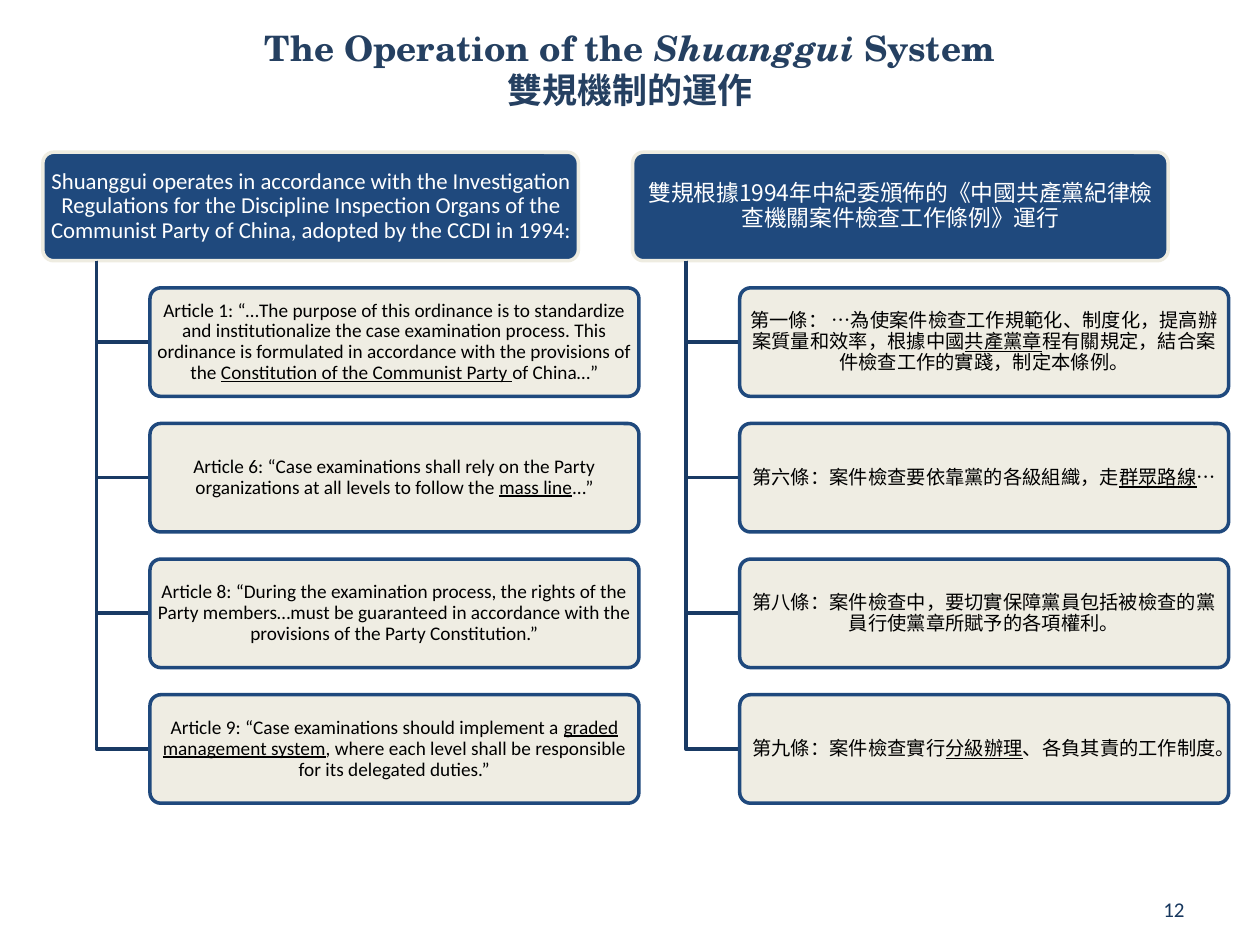
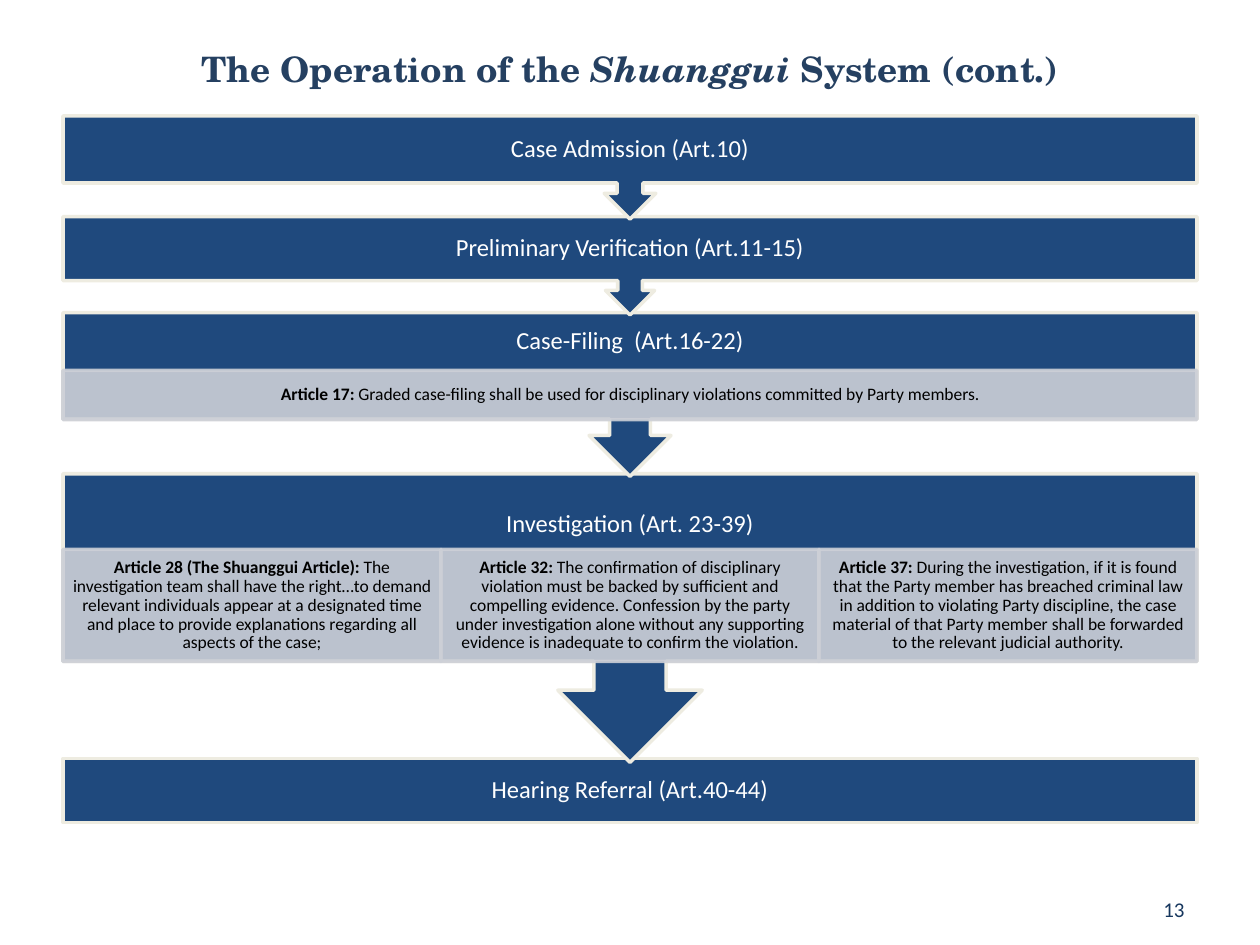
"""Build two slides on the operation of the Shuanggui system."""
from pptx import Presentation
from pptx import util as u
from pptx.dml.color import RGBColor
from pptx.enum import shapes, text
from pptx.oxml.ns import qn
from pptx.oxml.xmlchemy import OxmlElement


class Theme:
    navy, deep, spine, page = "1F497D", "254061", "193A64", "17375E"
    sand, mist, white, black = "EEECE1", "CDD0D7", "FFFFFF", "000000"
    serif, sans, han = "TeX Gyre Schola", "Calibri", "Noto Sans CJK TC"
    title, step, head, num, card, note = 20, 14, 13, 12, 11, 10
    line = 2


Kind = shapes.MSO_SHAPE
Align = text.PP_ALIGN


def write(shape, words, size, color, face=Theme.sans, mark="bold", pad=(7.2, 3.6),
          align=Align.CENTER, space=0.9, bold=None):
    frame = shape.text_frame
    frame.word_wrap = True
    frame.vertical_anchor = text.MSO_ANCHOR.MIDDLE
    frame.margin_left = frame.margin_right = u.Pt(pad[0])
    frame.margin_top = frame.margin_bottom = u.Pt(pad[1])
    for row, line in enumerate(words.split("\n")):
        para = frame.add_paragraph() if row else frame.paragraphs[0]
        para.alignment, para.line_spacing = align, space
        for n, part in enumerate(line.split("|")):
            if part:
                run = para.add_run()
                run.text = part
                if n % 2:
                    setattr(run.font, mark, True)
        font = para.font
        font.name, font.size, font.bold = face, u.Pt(size), bold
        font.color.rgb = RGBColor.from_string(color)
        if face == Theme.han:
            east = OxmlElement("a:ea")
            east.set("typeface", face)
            para._p.pPr.find(qn("a:defRPr")).append(east)


def box(slide, kind, area, fill, edge):
    shape = slide.shapes.add_shape(kind, *map(u.Pt, area))
    shape.shadow.inherit = False
    shape.fill.solid()
    shape.fill.fore_color.rgb = RGBColor.from_string(fill)
    shape.line.color.rgb = RGBColor.from_string(edge)
    shape.line.width = u.Pt(Theme.line)
    if kind == Kind.ROUNDED_RECTANGLE:
        shape.adjustments[0] = 0.1
    if fill in (Theme.sand, Theme.mist):
        for tint in shape._element.spPr.iter(qn("a:srgbClr")):
            if tint.get("val") == fill:
                alpha = OxmlElement("a:alpha")
                alpha.set("val", "90000")
                tint.append(alpha)
    return shape


deck = Presentation()
deck.slide_width, deck.slide_height = u.Pt(720), u.Pt(540)
titles = [
    "The Operation of the |Shuanggui| System\n雙規機制的運作",
    "The Operation of the |Shuanggui| System (cont.)",
]
for num, title in enumerate(titles, 12):
    slide = deck.slides.add_slide(deck.slide_layouts[6])
    head = slide.shapes.add_textbox(*map(u.Pt, (36, 5.8, 648, 66.2)))
    write(head, title, Theme.title, Theme.deep, Theme.serif, "italic", space=1, bold=True)
    foot = slide.shapes.add_textbox(*map(u.Pt, (606.2, 509.8, 77.8, 19.4)))
    write(foot, str(num), Theme.num, Theme.page, align=Align.RIGHT, space=1)
rules, flow = deck.slides

trees = [
    (24.5, Theme.sans,
     "Shuanggui operates in accordance with the Investigation Regulations for the Discipline "
     "Inspection Organs of the Communist Party of China, adopted by the CCDI in 1994:",
     ["Article 1: “…The purpose of this ordinance is to standardize and institutionalize the "
      "case examination process. This ordinance is formulated in accordance with the provisions "
      "of the |Constitution of the Communist Party |of China…”",
      "Article 6: “Case examinations shall rely on the Party organizations at all levels to "
      "follow the |mass line|...”",
      "Article 8: “During the examination process, the rights of the Party members…must be "
      "guaranteed in accordance with the provisions of the Party Constitution.”",
      "Article 9: “Case examinations should implement a |graded management system|, where each "
      "level shall be responsible for its delegated duties.”"]),
    (361.5, Theme.han,
     "雙規根據1994年中紀委頒佈的《中國共產黨紀律檢查機關案件檢查工作條例》運行",
     ["第一條： …為使案件檢查工作規範化、制度化，提高辦案質量和效率，根據中國|共產黨章|"
      "程有關規定，結合案件檢查工作的實踐，制定本條例。",
      "第六條：案件檢查要依靠黨的各級組織，走|群眾路線|…",
      "第八條：案件檢查中，要切實保障黨員包括被檢查的黨員行使黨章所賦予的各項權利。",
      "第九條：案件檢查實行|分級辦理|、各負其責的工作制度。"]),
]
top, wide, high = 87, 306, 62
for left, face, label, cards in trees:
    root = box(rules, Kind.ROUNDED_RECTANGLE, (left, top, wide, high), Theme.navy, Theme.sand)
    write(root, label, Theme.head, Theme.white, face, pad=(2, 1.5))
    stem, edge = left + wide / 10, left + wide / 5
    for n, words in enumerate(cards, 1):
        y = top + 1.25 * high * n
        mid = y + high / 2
        path = rules.shapes.build_freeform(u.Pt(stem), u.Pt(top + high))
        path.add_line_segments([(u.Pt(stem), u.Pt(mid)), (u.Pt(edge), u.Pt(mid))], close=False)
        bend = path.convert_to_shape()
        bend.shadow.inherit = False
        bend.fill.background()
        bend.line.color.rgb = RGBColor.from_string(Theme.spine)
        bend.line.width = u.Pt(Theme.line)
        card = box(rules, Kind.ROUNDED_RECTANGLE, (edge, y, 279.4, high), Theme.sand, Theme.navy)
        write(card, words, Theme.card, Theme.black, face, "underline", (1.5, 1.5))

steps = [
    ("Hearing Referral (Art.40-44)", 433.4, 36.7, 36.7, 0, 0, []),
    ("Investigation (Art. 23-39)", 270.7, 164.9, 57.6, 313.9, 64.1, [
        "|Article 28 (The Shuanggui Article): |The investigation team shall have the right…to "
        "demand relevant individuals appear at a designated time and place to provide "
        "explanations regarding all aspects of the case;",
        "|Article 32:| The confirmation of disciplinary violation must be backed by sufficient "
        "and compelling evidence. Confession by the party under investigation alone without any "
        "supporting evidence is inadequate to confirm the violation.",
        "|Article 37:| During the investigation, if it is found that the Party member has "
        "breached criminal law in addition to violating Party discipline, the case material of "
        "that Party member shall be forwarded to the relevant judicial authority."]),
    ("Case-Filing  (Art.16-22)", 178.6, 93.6, 33.1, 211.7, 28.1, [
        "|Article 17:| Graded case-filing shall be used for disciplinary violations committed "
        "by Party members."]),
    ("Preliminary Verification (Art.11-15)", 123.8, 56.2, 36.7, 0, 0, []),
    ("Case Admission (Art.10)", 66.2, 59, 38.2, 0, 0, []),
]
left, wide = 36, 648
for n, (label, y, high, band, low, deep, notes) in enumerate(steps):
    kind = Kind.UP_ARROW_CALLOUT if n else Kind.RECTANGLE
    stage = box(flow, kind, (left, y, wide, high), Theme.navy, Theme.sand)
    if n:
        stage.rotation = 180
        stage = flow.shapes.add_textbox(*map(u.Pt, (left, y, wide, band)))
    write(stage, label, Theme.step, Theme.white, pad=(7.9, 7.9))
    for col, words in enumerate(notes):
        part = wide / len(notes)
        note = box(flow, Kind.RECTANGLE, (left + col * part, low, part, deep),
                   Theme.mist, Theme.mist)
        write(note, words, Theme.note, Theme.black, pad=(5.7, 0.9))

deck.save("out.pptx")
